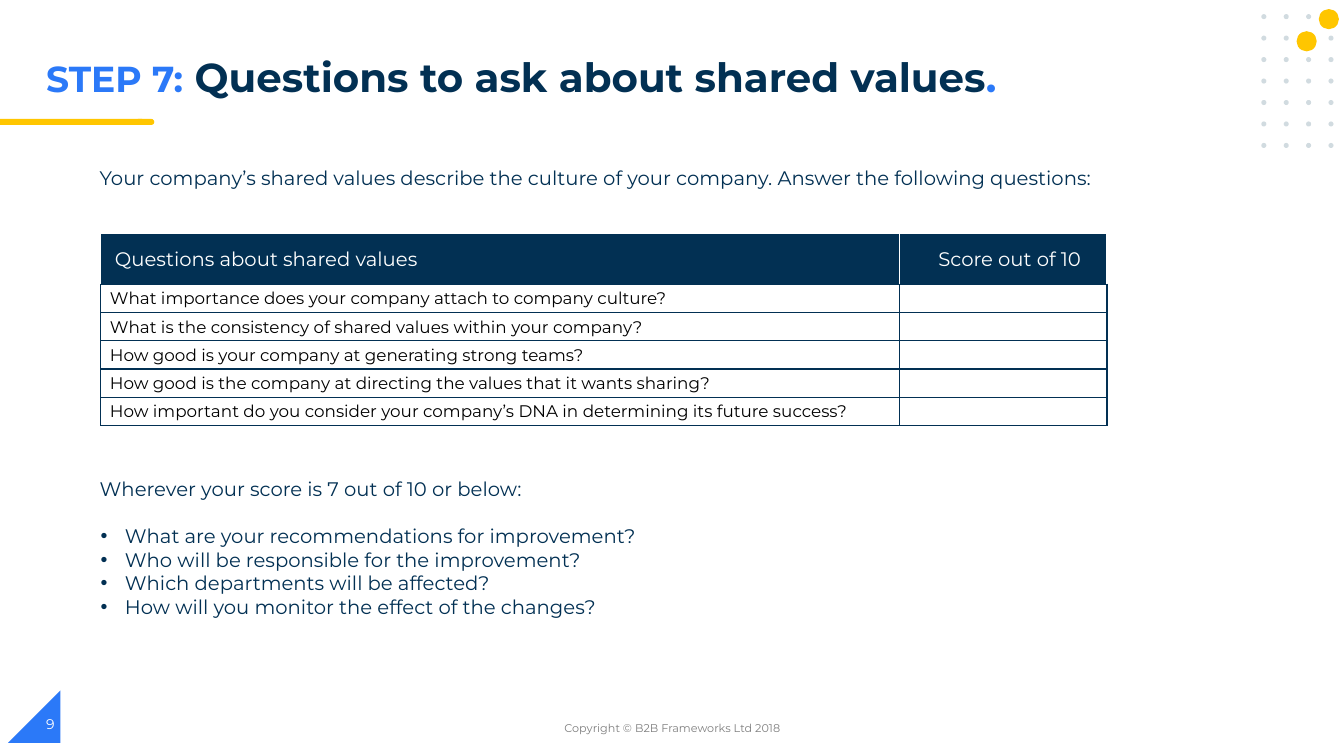
import pptx
import pptx.dml.color
import pptx.enum.shapes
import pptx.enum.text
import pptx.oxml.ns
import pptx.util
from lxml import etree

Inches, Pt = pptx.util.Inches, pptx.util.Pt
RGBColor = pptx.dml.color.RGBColor
Shape = pptx.enum.shapes.MSO_SHAPE
Align = pptx.enum.text.PP_ALIGN
Anchor = pptx.enum.text.MSO_ANCHOR
qn = pptx.oxml.ns.qn

THEME = {
    "font": "Montserrat",
    "navy": "023053", "blue": "2B79F8", "yellow": "FFC600", "dot": "D1DBE0",
    "white": "FFFFFF", "black": "000000", "grey": "7F7F7F",
    "step": 25.8, "title": 28.8, "body": 14, "cell": 12, "number": 10, "footer": 8,
}

TITLE = [
    ("STEP 7:", "step", "blue"),
    (" Questions to ask about shared values", "title", "navy"),
    (".", "title", "blue"),
]
INTRO = ("Your company’s shared values describe the culture of your company. "
         "Answer the following questions:")
HEADERS = ["Questions about shared values", "Score out of 10"]
QUESTIONS = [
    "What importance does your company attach to company culture?",
    "What is the consistency of shared values within your company?",
    "How good is your company at generating strong teams?",
    "How good is the company at directing the values that it wants sharing?",
    "How important do you consider your company’s DNA in determining its future success?",
]
FOLLOW_UP = "Wherever your score is 7 out of 10 or below:"
ACTIONS = [
    "What are your recommendations for improvement?",
    "Who will be responsible for the improvement?",
    "Which departments will be affected?",
    "How will you monitor the effect of the changes?",
]
COPYRIGHT = "Copyright © B2B Frameworks Ltd 2018"
PAGE_NUMBER = "9"

COLUMN_WIDTHS = [7.92, 2.06]
HEADER_HEIGHT, ROW_HEIGHT = 0.5, 0.28
DOT_COLUMNS, DOT_ROWS = 4, 7
DOT_LEFT, DOT_TOP, DOT_STEP_X, DOT_STEP_Y = 12.51, 0.14, 0.222, 0.213


def color(name):
    return RGBColor.from_string(THEME[name])


def add_text(paragraph, text, size="body", fill="navy", bold=False):
    run = paragraph.add_run()
    run.text = text
    run.font.name = THEME["font"]
    run.font.size = Pt(THEME[size])
    run.font.bold = bold
    run.font.color.rgb = color(fill)


def add_box(slide, left, top, width, height, anchor=Anchor.TOP):
    frame = slide.shapes.add_textbox(
        Inches(left), Inches(top), Inches(width), Inches(height)).text_frame
    frame.word_wrap = True
    frame.vertical_anchor = anchor
    return frame


def add_filled(slide, kind, left, top, width, height, fill):
    shape = slide.shapes.add_shape(
        kind, Inches(left), Inches(top), Inches(width), Inches(height))
    shape.shadow.inherit = False
    shape.fill.solid()
    shape.fill.fore_color.rgb = color(fill)
    shape.line.fill.background()
    return shape


def add_bullet(paragraph):
    properties = paragraph._p.get_or_add_pPr()
    properties.set("marL", str(Inches(0.25)))
    properties.set("indent", str(Inches(-0.24)))
    bullet_color = etree.SubElement(properties, qn("a:buClr"))
    etree.SubElement(bullet_color, qn("a:srgbClr"), val=THEME["navy"])
    etree.SubElement(properties, qn("a:buFont"), typeface="Arial")
    etree.SubElement(properties, qn("a:buChar"), char="•")


def set_borders(cell, **sides):
    """Draw one-point borders; each side (L, R, T, B) names a theme colour."""
    properties = cell._tc.get_or_add_tcPr()
    for position, (side, name) in enumerate(sides.items()):
        line = etree.Element(qn("a:ln" + side), w=str(Pt(1)))
        fill = etree.SubElement(line, qn("a:solidFill"))
        etree.SubElement(fill, qn("a:srgbClr"), val=THEME[name])
        properties.insert(position, line)


def fill_cell(cell, text, header):
    cell.margin_left = cell.margin_right = cell.margin_top = Inches(0.01)
    cell.margin_bottom = 0
    cell.vertical_anchor = Anchor.MIDDLE
    if header:
        cell.fill.solid()
        cell.fill.fore_color.rgb = color("navy")
        set_borders(cell, L="white", R="white", T="white", B="navy")
    else:
        cell.fill.background()
        set_borders(cell, L="navy", R="navy", T="navy", B="navy")
    paragraph = cell.text_frame.paragraphs[0]
    if text:
        indent = Inches(0.13 if header else 0.08)
        paragraph._p.get_or_add_pPr().set("marL", str(indent))
        add_text(paragraph, text, size="body" if header else "cell",
                 fill="white" if header else "black")
    else:
        etree.SubElement(paragraph._p, qn("a:endParaRPr"), sz=str(THEME["cell"] * 100))


def add_decoration(slide):
    triangle = add_filled(slide, Shape.RIGHT_TRIANGLE, 0.08, 6.85, 0.52, 0.52, "blue")
    triangle._element.spPr.find(qn("a:xfrm")).set("flipH", "1")
    add_filled(slide, Shape.FLOWCHART_TERMINATOR, 1.34, 1.18, 0.19, 0.06, "yellow")
    add_filled(slide, Shape.RECTANGLE, 0, 1.18, 1.41, 0.06, "yellow")
    for row in range(DOT_ROWS):
        for column in range(DOT_COLUMNS):
            add_filled(slide, Shape.OVAL, DOT_LEFT + column * DOT_STEP_X,
                       DOT_TOP + row * DOT_STEP_Y, 0.05, 0.05, "dot")
    for left, top in [(13.08, 0.09), (12.86, 0.31)]:
        add_filled(slide, Shape.OVAL, left, top, 0.2, 0.2, "yellow")


def add_question_table(slide):
    rows = [HEADERS] + [[question, ""] for question in QUESTIONS]
    height = HEADER_HEIGHT + ROW_HEIGHT * len(QUESTIONS)
    table = slide.shapes.add_table(
        len(rows), len(HEADERS), Inches(1), Inches(2.32),
        Inches(sum(COLUMN_WIDTHS)), Inches(height)).table
    table.horz_banding = False
    for column, width in zip(table.columns, COLUMN_WIDTHS):
        column.width = Inches(width)
    for index, texts in enumerate(rows):
        table.rows[index].height = Inches(ROW_HEIGHT if index else HEADER_HEIGHT)
        for column, text in enumerate(texts):
            fill_cell(table.cell(index, column), text, header=index == 0)
    table.cell(0, 1).text_frame.paragraphs[0].alignment = Align.CENTER


def main():
    presentation = pptx.Presentation()
    presentation.slide_width = Inches(13.33)
    presentation.slide_height = Inches(7.5)
    slide = presentation.slides.add_slide(presentation.slide_layouts[6])

    add_decoration(slide)

    title = add_box(slide, 0.36, 0.52, 9.89, 0.6).paragraphs[0]
    title.line_spacing = 0.9
    for text, size, fill in TITLE:
        add_text(title, text, size=size, fill=fill, bold=True)

    add_text(add_box(slide, 0.89, 1.6, 11.62, 0.34).paragraphs[0], INTRO)
    add_question_table(slide)

    follow_up = add_box(slide, 0.89, 4.68, 9.55, 1.52)
    add_text(follow_up.paragraphs[0], FOLLOW_UP)
    for index, action in enumerate(ACTIONS):
        paragraph = follow_up.add_paragraph()
        if index == 0:
            paragraph.space_before = Pt(17)
        add_bullet(paragraph)
        add_text(paragraph, action)

    footer = add_box(slide, 4.42, 7.02, 4.5, 0.4, Anchor.MIDDLE).paragraphs[0]
    footer.alignment = Align.CENTER
    add_text(footer, COPYRIGHT, size="footer", fill="grey")
    number = add_box(slide, 0.36, 6.98, 3, 0.4, Anchor.MIDDLE).paragraphs[0]
    add_text(number, PAGE_NUMBER, size="number", fill="white")

    presentation.save("out.pptx")


if __name__ == "__main__":
    main()
